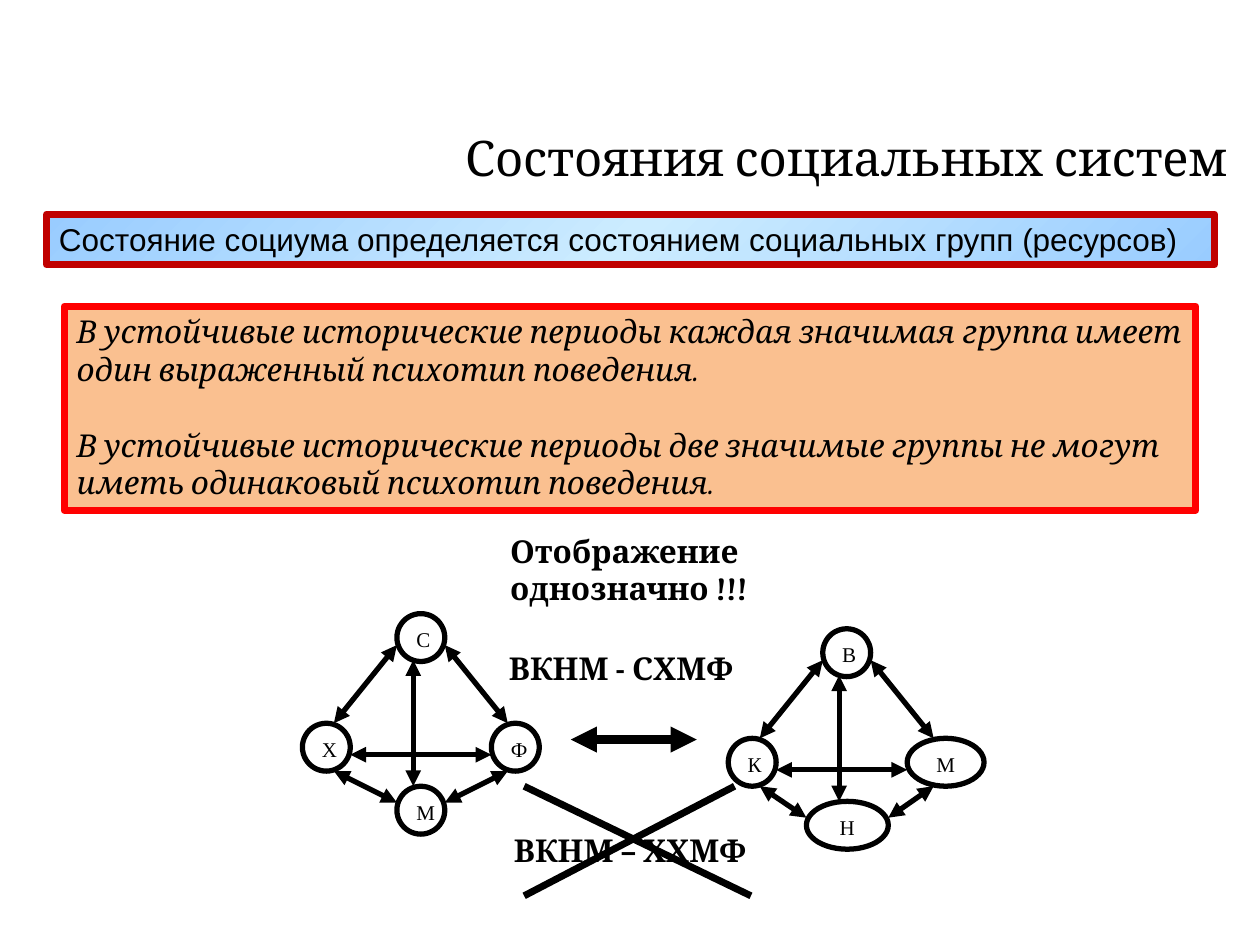
"""Build the slide on the states of social systems."""
from copy import deepcopy

from lxml import etree
from pptx import Presentation
from pptx.dml.color import RGBColor
from pptx.enum import shapes, text
from pptx.oxml.ns import qn
from pptx.util import Inches, Pt

THEME = {
    "ink": "000000", "node": "FFFFFF", "rule": "FAC090", "rule_edge": "FF0000",
    "thesis_edge": "C00000", "thesis": [(0, "99CCFF"), (0.5, "CCECFF"), (1, "99CCFF")],
    "serif": "Cambria", "sans": "Arial", "letter": "Times New Roman",
    "title_size": 28, "body_size": 18, "letter_size": 12, "blank_line": 21.5,
    "edge": 3, "frame": 4, "mapping": 5,
}
NODE = 0.38

TITLE = ("Состояния социальных систем", (0.12, 0.92, 9.72, 0.65))
THESIS = ("Состояние социума определяется состоянием социальных групп (ресурсов)",
          (0.37, 1.7, 9.27, 0.4))
RULES = ([
    "В устойчивые исторические периоды каждая значимая группа имеет один выраженный психотип поведения.",
    "В устойчивые исторические периоды две значимые группы не могут иметь одинаковый психотип поведения.",
], (0.51, 2.43, 8.98, 1.62))
CAPTIONS = [
    ("Отображение однозначно !!!", (3.95, 4.17, 2.25, 0.71)),
    ("ВКНМ - СХМФ", (3.94, 5.1, 2.42, 0.4)),
]
REJECTED = ("ВКНМ – ХХМФ", (3.98, 6.55, 2.42, 0.4))
CROSS = [((4.16, 6.24), (5.96, 7.11)), ((4.16, 7.11), (5.83, 6.24))]
MAPPING = ((4.53, 5.87), (5.53, 5.87))
DIAMONDS = [
    {"origin": (2.4, 4.87), "top": "С", "left": "Х",
     "right": ("Ф", 1.5, NODE), "bottom": ("М", 0.75, NODE)},
    {"origin": (5.78, 4.99), "top": "В", "left": "К",
     "right": ("М", 1.42, 0.61), "bottom": ("Н", 0.62, 0.65)},
]


def color(key):
    return RGBColor.from_string(THEME[key])


def write(shape, lines, font="serif", size="body_size", bold=False, italic=False,
          align=text.PP_ALIGN.LEFT, anchor=text.MSO_ANCHOR.TOP):
    frame = shape.text_frame
    frame.word_wrap = True
    frame.vertical_anchor = anchor
    for index, line in enumerate(lines):
        paragraph = frame.add_paragraph() if index else frame.paragraphs[0]
        paragraph.text = line
        paragraph.alignment = align
        if index:
            paragraph.space_before = Pt(THEME["blank_line"])
        paragraph.font.name = THEME[font]
        paragraph.font.size = Pt(THEME[size])
        paragraph.font.bold = bold
        paragraph.font.italic = italic
        paragraph.font.color.rgb = color("ink")


def add_text(parent, wording, box, **style):
    write(parent.add_textbox(*map(Inches, box)), [wording], **style)


def add_block(parent, kind, box, fill, edge, width):
    block = parent.add_shape(kind, *map(Inches, box))
    block.shadow.inherit = False
    block.fill.solid()
    block.fill.fore_color.rgb = color(fill)
    block.line.color.rgb = color(edge)
    block.line.width = Pt(THEME[width])
    return block


def add_line(parent, start, end, width, arrows=True):
    line = parent.add_connector(shapes.MSO_CONNECTOR.STRAIGHT, *map(Inches, start + end))
    line.line.color.rgb = color("ink")
    line.line.width = Pt(THEME[width])
    if arrows:
        for tag in ("a:headEnd", "a:tailEnd"):
            etree.SubElement(line.line._get_or_add_ln(), qn(tag)).set("type", "triangle")
    etree.SubElement(line._element.spPr, qn("a:effectLst"))


def add_gradient(shape, stops):
    shape.fill.gradient()
    shape.fill.gradient_angle = 315
    stop_list = shape._element.spPr.find(qn("a:gradFill")).find(qn("a:gsLst"))
    stop_list.append(deepcopy(stop_list[0]))
    for stop, (position, rgb) in zip(shape.fill.gradient_stops, stops):
        stop.position = position
        stop.color.rgb = RGBColor.from_string(rgb)


def add_diamond(parent, diamond):
    left, top = diamond["origin"]
    right_letter, right_x, right_width = diamond["right"]
    bottom_letter, bottom_x, bottom_width = diamond["bottom"]
    nodes = [
        (diamond["top"], 0.75, 0, NODE),
        (right_letter, right_x, 0.87, right_width),
        (bottom_letter, bottom_x, 1.37, bottom_width),
        (diamond["left"], 0, 0.87, NODE),
    ]
    edges = [
        ((0.88, 0.37), (0.88, 1.37)),
        ((NODE, 1.12), (right_x, 1.12)),
        ((0.75, 0.25), (0.25, 0.87)),
        ((1.13, 0.25), (1.63, 0.87)),
        ((1.63, 1.25), (bottom_x + bottom_width, 1.5)),
        ((0.25, 1.25), (bottom_x, 1.5)),
    ]
    for letter, x, y, width in nodes:
        node = add_block(parent, shapes.MSO_SHAPE.OVAL, (left + x, top + y, width, NODE),
                         "node", "ink", "edge")
        align = text.PP_ALIGN.CENTER if width > NODE else text.PP_ALIGN.LEFT
        write(node, [letter], "letter", "letter_size", align=align)
    for start, end in edges:
        add_line(parent, (left + start[0], top + start[1]),
                 (left + end[0], top + end[1]), "edge")


def main():
    deck = Presentation()
    deck.slide_width, deck.slide_height = Inches(10), Inches(7.5)
    canvas = deck.slides.add_slide(deck.slide_layouts[6]).shapes

    add_text(canvas, *TITLE, size="title_size", align=text.PP_ALIGN.RIGHT,
             anchor=text.MSO_ANCHOR.MIDDLE)
    rules, rules_box = RULES
    write(add_block(canvas, shapes.MSO_SHAPE.RECTANGLE, rules_box,
                    "rule", "rule_edge", "frame"), rules, italic=True)

    mapping = canvas.add_group_shape().shapes
    for diamond in DIAMONDS:
        add_diamond(mapping, diamond)
    add_line(mapping, *MAPPING, "mapping")

    for wording, box in CAPTIONS:
        add_text(canvas, wording, box, bold=True)
    rejected = canvas.add_group_shape().shapes
    add_text(rejected, *REJECTED, bold=True)
    for start, end in CROSS:
        add_line(rejected, start, end, "frame", arrows=False)

    thesis, thesis_box = THESIS
    banner = add_block(canvas, shapes.MSO_SHAPE.RECTANGLE, thesis_box,
                       "node", "thesis_edge", "frame")
    add_gradient(banner, THEME["thesis"])
    write(banner, [thesis], "sans")
    deck.save("out.pptx")


if __name__ == "__main__":
    main()
